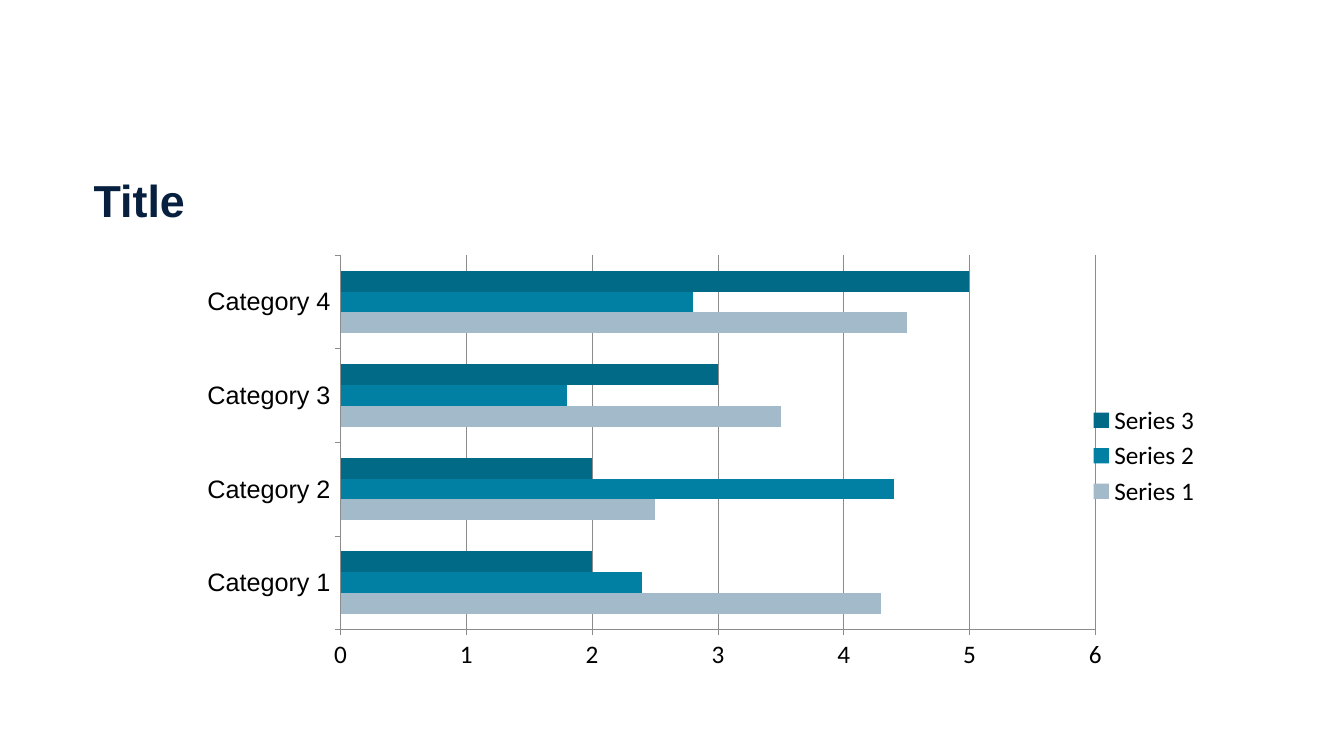
"""Build a title slide with a clustered bar chart of three series."""
from dataclasses import dataclass

from lxml.etree import SubElement
from pptx import Presentation
from pptx.chart.data import CategoryChartData
from pptx.dml.color import RGBColor
from pptx.enum.chart import XL_CHART_TYPE as ChartType
from pptx.enum.chart import XL_LEGEND_POSITION as LegendPosition
from pptx.enum.chart import XL_TICK_MARK as TickMark
from pptx.enum.text import MSO_AUTO_SIZE as AutoSize
from pptx.oxml.ns import qn
from pptx.util import Cm, Pt

TITLE = "Title"
CATEGORIES = ["Category 1", "Category 2", "Category 3", "Category 4"]
SERIES = {
    "Series 1": (4.3, 2.5, 3.5, 4.5),
    "Series 2": (2.4, 4.4, 1.8, 2.8),
    "Series 3": (2, 2, 3, 5),
}
SLIDE_SIZE = (33.87, 19.05)
TITLE_BOX = (2.11, 4.24, 16.84, 1.63)
CHART_BOX = (4.09, 5.87, 26.42, 11.23)
PLOT_SHARE = {"x": 0.17, "y": 0.05, "w": 0.72, "h": 0.84}


@dataclass(frozen=True)
class Theme:
    """Colours, fonts and sizes of the slide."""
    heading: str = "07203F"
    text: str = "000000"
    rule: str = "8C8C8C"
    bars: tuple = ("A2BACA", "0180A3", "016A87")
    main_font: str = "Arial"
    chart_font: str = "Calibri"
    title_size: int = 32
    chart_size: int = 18
    rule_width: float = 0.5


THEME = Theme()


def style_font(font, name, size, colour, bold=False):
    """Set the face, size, colour and weight of a font."""
    font.name, font.size, font.bold = name, Pt(size), bold
    font.color.rgb = RGBColor.from_string(colour)


def style_rule(line):
    """Give an axis or gridline the thin grey rule."""
    line.color.rgb = RGBColor.from_string(THEME.rule)
    line.width = Pt(THEME.rule_width)


def place_plot(plot_area):
    """Fix the inner plot area as shares of the chart."""
    for old_layout in plot_area.findall(qn("c:layout")):
        plot_area.remove(old_layout)
    layout = SubElement(plot_area, qn("c:layout"))
    plot_area.insert(0, layout)
    manual = SubElement(layout, qn("c:manualLayout"))
    settings = {"layoutTarget": "inner", "xMode": "edge", "yMode": "edge", **PLOT_SHARE}
    for tag, value in settings.items():
        SubElement(manual, qn(f"c:{tag}")).set("val", str(value))


def add_title(slide):
    """Add the slide title."""
    frame = slide.shapes.add_textbox(*map(Cm, TITLE_BOX)).text_frame
    frame.word_wrap = True
    frame.auto_size = AutoSize.SHAPE_TO_FIT_TEXT
    run = frame.paragraphs[0].add_run()
    run.text = TITLE
    style_font(run.font, THEME.main_font, THEME.title_size, THEME.heading, bold=True)


def add_bars(slide):
    """Add the bar chart with its axes and legend."""
    data = CategoryChartData()
    data.categories = CATEGORIES
    for name, values in SERIES.items():
        data.add_series(name, values)
    chart = slide.shapes.add_chart(
        ChartType.BAR_CLUSTERED, *map(Cm, CHART_BOX), data).chart
    chart.has_title = False
    style_font(chart.font, THEME.chart_font, THEME.chart_size, THEME.text)

    bars = chart.plots[0]
    bars.gap_width, bars.overlap, bars.vary_by_categories = 150, 0, False
    for series, colour in zip(bars.series, THEME.bars):
        series.format.fill.solid()
        series.format.fill.fore_color.rgb = RGBColor.from_string(colour)

    axis_fonts = ((chart.category_axis, THEME.main_font),
                  (chart.value_axis, THEME.chart_font))
    for axis, face in axis_fonts:
        axis.major_tick_mark, axis.minor_tick_mark = TickMark.OUTSIDE, TickMark.NONE
        style_font(axis.tick_labels.font, face, THEME.chart_size, THEME.text)
        style_rule(axis.format.line)
    scale = chart.value_axis
    scale.minimum_scale, scale.maximum_scale, scale.major_unit = 0, 6, 1
    scale.has_major_gridlines = True
    style_rule(scale.major_gridlines.format.line)

    chart.has_legend = True
    chart.legend.position = LegendPosition.RIGHT
    chart.legend.include_in_layout = False
    style_font(chart.legend.font, THEME.chart_font, THEME.chart_size, THEME.text)
    place_plot(chart.element.chart.plotArea)


def main():
    """Build and save the slide."""
    deck = Presentation()
    deck.slide_width, deck.slide_height = map(Cm, SLIDE_SIZE)
    slide = deck.slides.add_slide(deck.slide_layouts[6])
    add_title(slide)
    add_bars(slide)
    deck.save("out.pptx")


if __name__ == "__main__":
    main()
